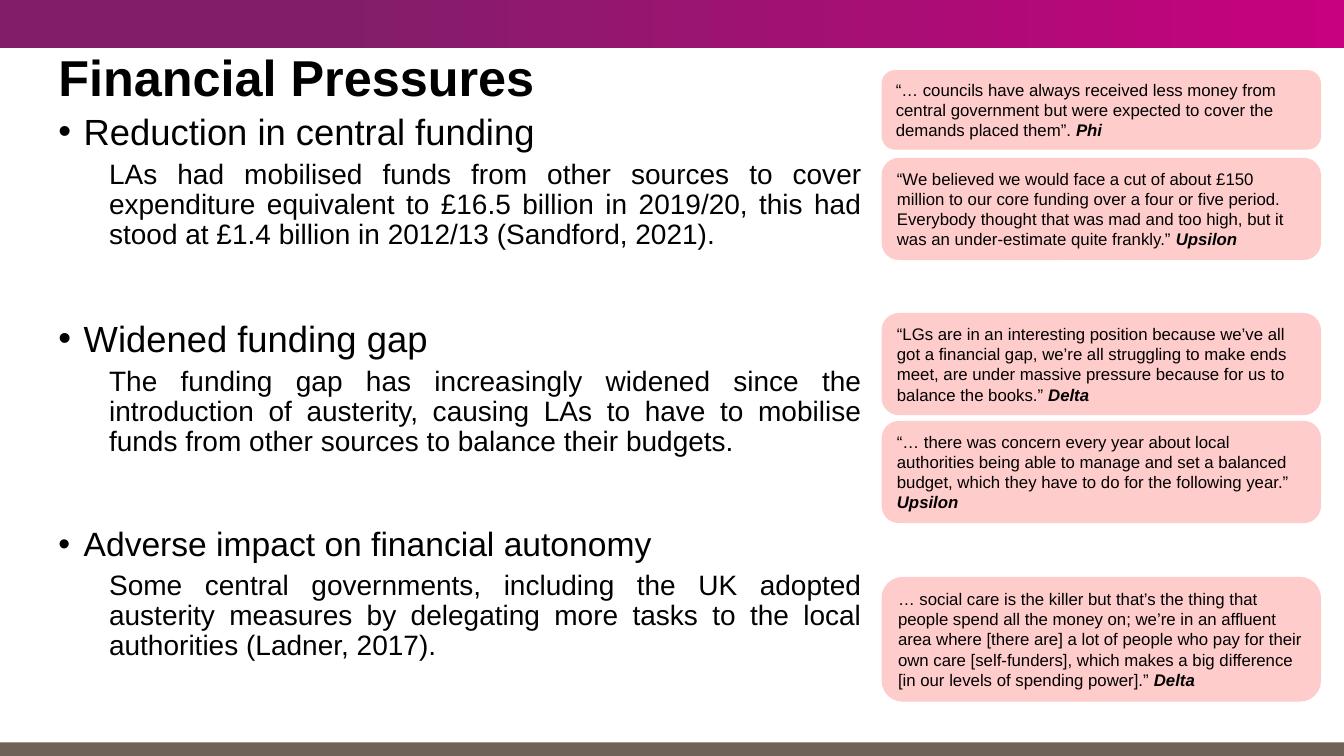
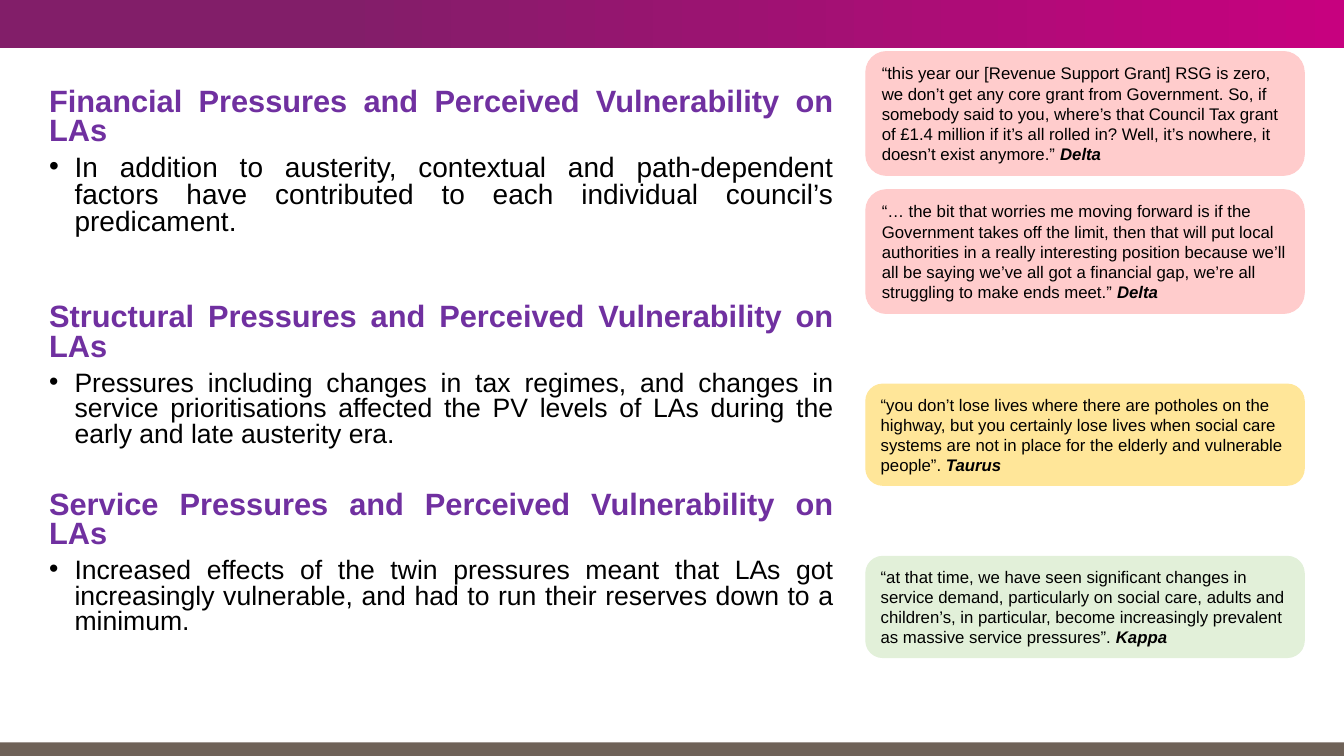
from dataclasses import dataclass

from lxml import etree
from pptx import Presentation
from pptx.dml.color import RGBColor
from pptx.enum.shapes import MSO_SHAPE
from pptx.enum.text import MSO_ANCHOR, MSO_AUTO_SIZE, PP_ALIGN
from pptx.oxml.ns import qn
from pptx.util import Cm, Pt

RECTANGLE = MSO_SHAPE.RECTANGLE
ROUNDED = MSO_SHAPE.ROUNDED_RECTANGLE
MIDDLE = MSO_ANCHOR.MIDDLE
LEFT = PP_ALIGN.LEFT
JUSTIFY = PP_ALIGN.JUSTIFY
NO_AUTOFIT = MSO_AUTO_SIZE.NONE

BLACK = RGBColor(0x00, 0x00, 0x00)
MAGENTA = RGBColor(0xC7, 0x01, 0x7F)
PLUM = RGBColor(0x82, 0x1E, 0x69)
TAUPE = RGBColor(0x6F, 0x62, 0x58)
PURPLE = RGBColor(0x70, 0x30, 0xA0)
PINK = RGBColor(0xFF, 0xCC, 0xCC)
YELLOW = RGBColor(0xFF, 0xE6, 0x99)
GREEN = RGBColor(0xE2, 0xF0, 0xD9)

FONT = "Arial"
SLIDE_WIDTH, SLIDE_HEIGHT = 33.87, 19.05
TOP_BAND, BOTTOM_BAND = 1.22, 0.34
TITLE_ONLY, BLANK = 5, 6
BULLET_INDENT = 0.64
QUOTE_WIDTH, QUOTE_LINE, QUOTE_PADDING = 11.05, 0.57, 0.27


@dataclass
class Style:
    margin: float = 0
    bullet: bool = False
    color: RGBColor = BLACK
    bold: bool = False


TOPIC = Style(margin=BULLET_INDENT, bullet=True)
DETAIL = Style(margin=2 * BULLET_INDENT)
HEADING = Style(color=PURPLE, bold=True)

PRESSURES = [
    ("Reduction in central funding", TOPIC, 26, 0),
    ("LAs had mobilised funds from other sources to cover expenditure equivalent to £16.5 billion "
     "in 2019/20, this had stood at £1.4 billion in 2012/13 (Sandford, 2021).", DETAIL, 20, 5),
    ("Widened funding gap", TOPIC, 26, 50),
    ("The funding gap has increasingly widened since the introduction of austerity, causing LAs to "
     "have to mobilise funds from other sources to balance their budgets.", DETAIL, 20, 5),
    ("Adverse impact on financial autonomy", TOPIC, 24, 50),
    ("Some central governments, including the UK adopted austerity measures by delegating more "
     "tasks to the local authorities (Ladner, 2017).", DETAIL, 20, 5),
]

PRESSURE_QUOTES = [
    (1.78, 3, PINK, "“… councils have always received less money from central government but were "
     "expected to cover the demands placed them”. ", "Phi"),
    (3.99, 4, PINK, "“We believed we would face a cut of about £150 million to our core funding over "
     "a four or five period. Everybody thought that was mad and too high, but it was an "
     "under-estimate quite frankly.” ", "Upsilon"),
    (7.9, 4, PINK, "“LGs are in an interesting position because we’ve all got a financial gap, we’re "
     "all struggling to make ends meet, are under massive pressure because for us to balance the "
     "books.” ", "Delta"),
    (10.62, 4, PINK, "“… there was concern every year about local authorities being able to manage "
     "and set a balanced budget, which they have to do for the following year.” ", "Upsilon"),
    (14.55, 5, PINK, "… social care is the killer but that’s the thing that people spend all the "
     "money on; we’re in an affluent area where [there are] a lot of people who pay for their own "
     "care [self-funders], which makes a big difference [in our levels of spending power].” ",
     "Delta"),
]

VULNERABILITY = [
    ("Financial Pressures and Perceived Vulnerability on LAs", HEADING, 22, 0),
    ("In addition to austerity, contextual and path-dependent factors have contributed to each "
     "individual council’s predicament.", TOPIC, 20, 6),
    ("Structural Pressures and Perceived Vulnerability on LAs", HEADING, 22, 48),
    ("Pressures including changes in tax regimes, and changes in service prioritisations affected "
     "the PV levels of LAs during the early and late austerity era.", TOPIC, 19, 6),
    ("Service Pressures and Perceived Vulnerability on LAs", HEADING, 22, 31),
    ("Increased effects of the twin pressures meant that LAs got increasingly vulnerable, and had "
     "to run their reserves down to a minimum.", TOPIC, 19, 6),
]

VULNERABILITY_QUOTES = [
    (1.3, 5, PINK, "“this year our [Revenue Support Grant] RSG is zero, we don’t get any core grant "
     "from Government. So, if somebody said to you, where’s that Council Tax grant of £1.4 million "
     "if it’s all rolled in? Well, it’s nowhere, it doesn’t exist anymore.” ", "Delta"),
    (4.78, 5, PINK, "“… the bit that worries me moving forward is if the Government takes off the "
     "limit, then that will put local authorities in a really interesting position because we’ll "
     "all be saying we’ve all got a financial gap, we’re all struggling to make ends meet.” ",
     "Delta"),
    (9.68, 4, YELLOW, "“you don’t lose lives where there are potholes on the highway, but you "
     "certainly lose lives when social care systems are not in place for the elderly and "
     "vulnerable people”. ", "Taurus"),
    (14.02, 4, GREEN, "“at that time, we have seen significant changes in service demand, "
     "particularly on social care, adults and children’s, in particular, become increasingly "
     "prevalent as massive service pressures”. ", "Kappa"),
]


def add_run(paragraph, text, size, color=BLACK, bold=False, italic=False):
    run = paragraph.add_run()
    run.text = text
    font = run.font
    font.name, font.size = FONT, Pt(size)
    font.bold, font.italic = bold, italic
    font.color.rgb = color


def add_band(slide, top, height):
    band = slide.shapes.add_shape(RECTANGLE, 0, Cm(top), Cm(SLIDE_WIDTH), Cm(height))
    band.shadow.inherit = False
    band.line.fill.background()
    return band


def add_bands(slide):
    fill = add_band(slide, 0, TOP_BAND).fill
    fill.gradient()
    fill.gradient_angle = 180
    for stop, position, color in zip(fill.gradient_stops, (0, 0.75), (MAGENTA, PLUM)):
        stop.position = position
        stop.color.rgb = color
    footer = add_band(slide, SLIDE_HEIGHT - BOTTOM_BAND, BOTTOM_BAND)
    footer.fill.solid()
    footer.fill.fore_color.rgb = TAUPE


def place_title(slide, text, left, top, width, height):
    title = slide.shapes.title
    title.left, title.top = Cm(left), Cm(top)
    title.width, title.height = Cm(width), Cm(height)
    frame = title.text_frame
    frame.auto_size = NO_AUTOFIT
    frame.vertical_anchor = MIDDLE
    paragraph = frame.paragraphs[0]
    paragraph.alignment = LEFT
    paragraph.line_spacing = 0.9
    add_run(paragraph, text, 36, bold=True)


def format_indent(paragraph, style):
    properties = paragraph._p.get_or_add_pPr()
    properties.set("marL", str(Cm(style.margin)))
    properties.set("indent", str(-Cm(BULLET_INDENT) if style.bullet else 0))
    if style.bullet:
        etree.SubElement(properties, qn("a:buFont")).set("typeface", FONT)
        etree.SubElement(properties, qn("a:buChar")).set("char", "•")


def add_body(slide, entries, line_spacing, left, top, width, height):
    box = slide.shapes.add_textbox(Cm(left), Cm(top), Cm(width), Cm(height))
    frame = box.text_frame
    frame.word_wrap = True
    for index, (text, style, size, space_before) in enumerate(entries):
        paragraph = frame.add_paragraph() if index else frame.paragraphs[0]
        format_indent(paragraph, style)
        paragraph.alignment = JUSTIFY
        paragraph.line_spacing = line_spacing
        paragraph.space_before = Pt(space_before)
        add_run(paragraph, text, size, style.color, style.bold)


def add_quotes(slide, quotes, left, width):
    for top, lines, color, words, speaker in quotes:
        height = QUOTE_PADDING + QUOTE_LINE * lines
        box = slide.shapes.add_shape(ROUNDED, Cm(left), Cm(top), Cm(width), Cm(height))
        box.shadow.inherit = False
        box.fill.solid()
        box.fill.fore_color.rgb = color
        box.line.color.rgb = color
        box.line.width = Pt(0.75)
        frame = box.text_frame
        frame.word_wrap = True
        frame.vertical_anchor = MIDDLE
        paragraph = frame.paragraphs[0]
        paragraph.alignment = LEFT
        add_run(paragraph, words, 12)
        add_run(paragraph, speaker, 12, bold=True, italic=True)


def add_slide(presentation, layout):
    slide = presentation.slides.add_slide(presentation.slide_layouts[layout])
    add_bands(slide)
    return slide


def build_pressures(presentation):
    slide = add_slide(presentation, TITLE_ONLY)
    place_title(slide, "Financial Pressures", 1.22, 0.81, 31.39, 2.41)
    add_body(slide, PRESSURES, 0.9, 1.22, 2.74, 20.75, 14.99)
    add_quotes(slide, PRESSURE_QUOTES, 22.23, QUOTE_WIDTH)


def build_vulnerability(presentation):
    slide = add_slide(presentation, BLANK)
    add_body(slide, VULNERABILITY, 0.8, 0.99, 2.11, 20.27, 15.32)
    add_quotes(slide, VULNERABILITY_QUOTES, 21.82, QUOTE_WIDTH)


def main():
    presentation = Presentation()
    presentation.slide_width = Cm(SLIDE_WIDTH)
    presentation.slide_height = Cm(SLIDE_HEIGHT)
    build_pressures(presentation)
    build_vulnerability(presentation)
    presentation.save("out.pptx")


if __name__ == "__main__":
    main()
